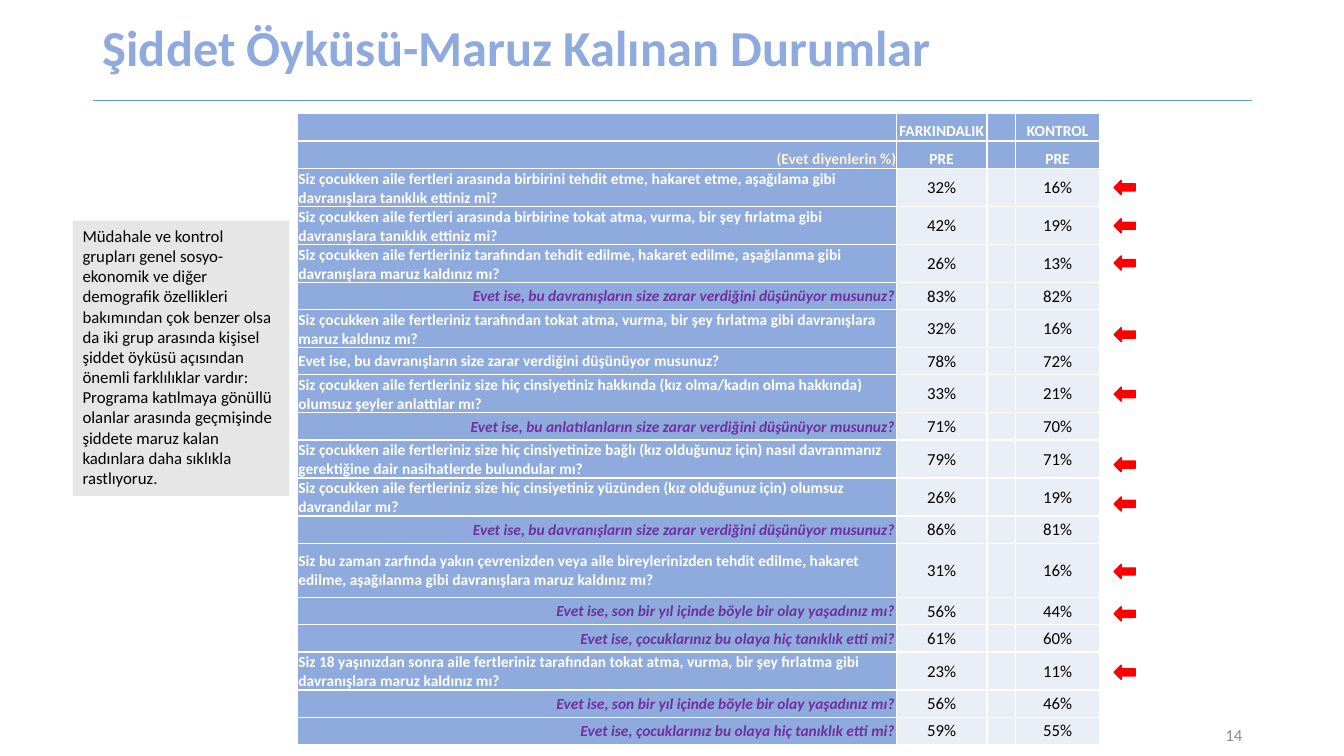
from dataclasses import dataclass

from lxml import etree
from pptx import Presentation
from pptx import util as u
from pptx.dml.color import RGBColor
from pptx.enum import shapes, text
from pptx.oxml import ns

FONT = "Calibri"
BLUE, PALE, WHITE, BLACK = "8FAADC", "EAEFF7", "FFFFFF", "000000"
PURPLE, CREAM, RED = "7030A0", "FFF2CC", "FF0000"
LEFT, CENTER, RIGHT = text.PP_ALIGN.LEFT, text.PP_ALIGN.CENTER, text.PP_ALIGN.RIGHT
MIDDLE, BOTTOM = text.MSO_ANCHOR.MIDDLE, text.MSO_ANCHOR.BOTTOM


@dataclass
class Style:
    size: float
    color: str
    bold: bool = False
    italic: bool = False
    align: text.PP_ALIGN = LEFT


@dataclass
class Question:
    wording: str
    awareness: int
    control: int
    follow_up: bool = False
    height: float = 0.27


HEADER = Style(11, WHITE, bold=True, align=CENTER)
HEADER_NOTE = Style(11, CREAM, bold=True, align=RIGHT)
MAIN = Style(11, WHITE, bold=True)
FOLLOW_UP = Style(11, PURPLE, bold=True, italic=True, align=RIGHT)
VALUE = Style(12, BLACK, align=CENTER)

HARM = "Evet ise, bu davranışların size zarar verdiğini düşünüyor musunuz?"
LAST_YEAR = "Evet ise, son bir yıl içinde böyle bir olay yaşadınız mı?"
CHILDREN = "Evet ise, çocuklarınız bu olaya hiç tanıklık etti mi?"
QUESTIONS = [
    Question("Siz çocukken aile fertleri arasında birbirini tehdit etme, hakaret etme, "
             "aşağılama gibi davranışlara tanıklık ettiniz mi?", 32, 16),
    Question("Siz çocukken aile fertleri arasında birbirine tokat atma, vurma, bir şey "
             "fırlatma gibi davranışlara tanıklık ettiniz mi?", 42, 19),
    Question("Siz çocukken aile fertleriniz tarafından tehdit edilme, hakaret edilme, "
             "aşağılanma gibi davranışlara maruz kaldınız mı?", 26, 13),
    Question(HARM, 83, 82, follow_up=True),
    Question("Siz çocukken aile fertleriniz tarafından tokat atma, vurma, bir şey "
             "fırlatma gibi davranışlara maruz kaldınız mı?", 32, 16),
    Question(HARM, 78, 72),
    Question("Siz çocukken aile fertleriniz size hiç cinsiyetiniz hakkında (kız olma/kadın "
             "olma hakkında) olumsuz şeyler anlattılar mı?", 33, 21),
    Question("Evet ise, bu anlatılanların size zarar verdiğini düşünüyor musunuz?",
             71, 70, follow_up=True),
    Question("Siz çocukken aile fertleriniz size hiç cinsiyetinize bağlı (kız olduğunuz "
             "için) nasıl davranmanız gerektiğine dair nasihatlerde bulundular mı?", 79, 71),
    Question("Siz çocukken aile fertleriniz size hiç cinsiyetiniz yüzünden (kız olduğunuz "
             "için) olumsuz davrandılar mı?", 26, 19),
    Question(HARM, 86, 81, follow_up=True),
    Question("Siz bu zaman zarfında yakın çevrenizden veya aile bireylerinizden tehdit "
             "edilme, hakaret edilme, aşağılanma gibi davranışlara maruz kaldınız mı?",
             31, 16, height=0.54),
    Question(LAST_YEAR, 56, 44, follow_up=True),
    Question(CHILDREN, 61, 60, follow_up=True),
    Question("Siz 18 yaşınızdan sonra aile fertleriniz tarafından tokat atma, vurma, bir şey "
             "fırlatma gibi davranışlara maruz kaldınız mı?", 23, 11),
    Question(LAST_YEAR, 56, 46, follow_up=True),
    Question(CHILDREN, 59, 55, follow_up=True),
]
COLUMN_WIDTHS = [5.94, 0.9, 0.28, 0.84]
ARROW_TOPS = [1.79, 2.17, 2.54, 3.25, 3.84, 4.54, 4.93, 5.6, 6.02, 6.6]
COMMENT = ("Müdahale ve kontrol grupları genel sosyo-ekonomik ve diğer demografik özellikleri "
           "bakımından çok benzer olsa da iki grup arasında kişisel şiddet öyküsü açısından "
           "önemli farklılıklar vardır: Programa katılmaya gönüllü olanlar arasında geçmişinde "
           "şiddete maruz kalan kadınlara daha sıklıkla rastlıyoruz.")


def rgb(color: str) -> RGBColor:
    return RGBColor.from_string(color)


def inches(*lengths: float) -> list[u.Length]:
    return [u.Inches(length) for length in lengths]


def write(frame, wording: str, style: Style) -> None:
    paragraph = frame.paragraphs[0]
    paragraph.alignment = style.align
    run = paragraph.add_run()
    run.text = wording
    font = run.font
    font.name, font.size = FONT, u.Pt(style.size)
    font.bold, font.italic = style.bold, style.italic
    font.color.rgb = rgb(style.color)


def add_borders(cell) -> None:
    properties = cell._tc.get_or_add_tcPr()
    for side in ("lnL", "lnR", "lnT", "lnB"):
        line = etree.SubElement(properties, ns.qn(f"a:{side}"), w=str(u.Pt(1)))
        fill = etree.SubElement(line, ns.qn("a:solidFill"))
        etree.SubElement(fill, ns.qn("a:srgbClr"), val=WHITE)


def fill_cell(cell, wording: str, style: Style, fill: str, header: bool) -> None:
    add_borders(cell)
    cell.fill.solid()
    cell.fill.fore_color.rgb = rgb(fill)
    cell.vertical_anchor = BOTTOM if header else MIDDLE
    cell.margin_left = cell.margin_right = cell.margin_top = u.Inches(0 if header else 0.01)
    cell.margin_bottom = 0
    if wording:
        write(cell.text_frame, wording, style)
    else:
        paragraph = cell.text_frame.paragraphs[0]._p
        etree.SubElement(paragraph, ns.qn("a:endParaRPr"), sz=str(style.size * 100))


def add_survey_table(slide) -> None:
    heights = [0.27, 0.27] + [question.height for question in QUESTIONS]
    table = slide.shapes.add_table(
        len(heights), len(COLUMN_WIDTHS),
        *inches(2.95, 1.13, sum(COLUMN_WIDTHS), sum(heights))).table
    table.first_row = table.horz_banding = False
    for column, width in zip(table.columns, COLUMN_WIDTHS):
        column.width = u.Inches(width)
    for row, height in zip(table.rows, heights):
        row.height = u.Inches(height)

    rows = [(["", "FARKINDALIK", "", "KONTROL"], HEADER),
            (["(Evet diyenlerin %)", "PRE", "", "PRE"], HEADER_NOTE)]
    for question in QUESTIONS:
        rows.append(([question.wording, f"{question.awareness}%", "", f"{question.control}%"],
                     FOLLOW_UP if question.follow_up else MAIN))
    for row_index, (wordings, first_style) in enumerate(rows):
        header = row_index < 2
        for column_index, wording in enumerate(wordings):
            first = column_index == 0
            style = first_style if first else HEADER if header else VALUE
            fill = BLUE if first or header else PALE
            fill_cell(table.cell(row_index, column_index), wording, style, fill, header)


def add_arrow(slide, top: float) -> None:
    arrow = slide.shapes.add_shape(shapes.MSO_SHAPE.LEFT_ARROW, *inches(11.05, top, 0.21, 0.14))
    arrow.shadow.inherit = False
    arrow.fill.solid()
    arrow.fill.fore_color.rgb = rgb(RED)
    arrow.line.color.rgb = rgb(RED)
    arrow.line.width = u.Pt(1)


def add_title(slide) -> None:
    rule = slide.shapes.add_connector(shapes.MSO_CONNECTOR.STRAIGHT, *inches(0.92, 1, 12.42, 1))
    rule.line.color.rgb = rgb("5B9BD5")
    rule.line.width = u.Pt(0.5)
    etree.SubElement(rule._element.spPr, ns.qn("a:effectLst"))

    title = slide.shapes.title
    title.left, title.top, title.width, title.height = inches(0.92, 0, 11.5, 1)
    title.text_frame.vertical_anchor = MIDDLE
    write(title.text_frame, "Şiddet Öyküsü-Maruz Kalınan Durumlar", Style(36, BLUE, bold=True))
    title.text_frame.paragraphs[0].line_spacing = 0.9


def add_comment(slide) -> None:
    box = slide.shapes.add_shape(shapes.MSO_SHAPE.RECTANGLE, *inches(0.72, 2.19, 2.15, 2.73))
    box.shadow.inherit = False
    box.fill.solid()
    box.fill.fore_color.rgb = rgb("E7E6E6")
    box.line.fill.background()
    box.text_frame.word_wrap = True
    box.text_frame.auto_size = text.MSO_AUTO_SIZE.SHAPE_TO_FIT_TEXT
    box.text_frame.vertical_anchor = text.MSO_ANCHOR.TOP
    write(box.text_frame, COMMENT, Style(12, BLACK))


def add_page_number(slide) -> None:
    frame = slide.shapes.add_textbox(*inches(9.42, 7.09, 3, 0.4)).text_frame
    frame.word_wrap = True
    frame.vertical_anchor = MIDDLE
    write(frame, "14", Style(12, "8C8C8C", align=RIGHT))


def main() -> None:
    presentation = Presentation()
    presentation.slide_width, presentation.slide_height = inches(13.33, 7.5)
    slide = presentation.slides.add_slide(presentation.slide_layouts[5])
    add_title(slide)
    add_page_number(slide)
    add_survey_table(slide)
    for top in ARROW_TOPS:
        add_arrow(slide, top)
    add_comment(slide)
    presentation.save("out.pptx")


if __name__ == "__main__":
    main()
